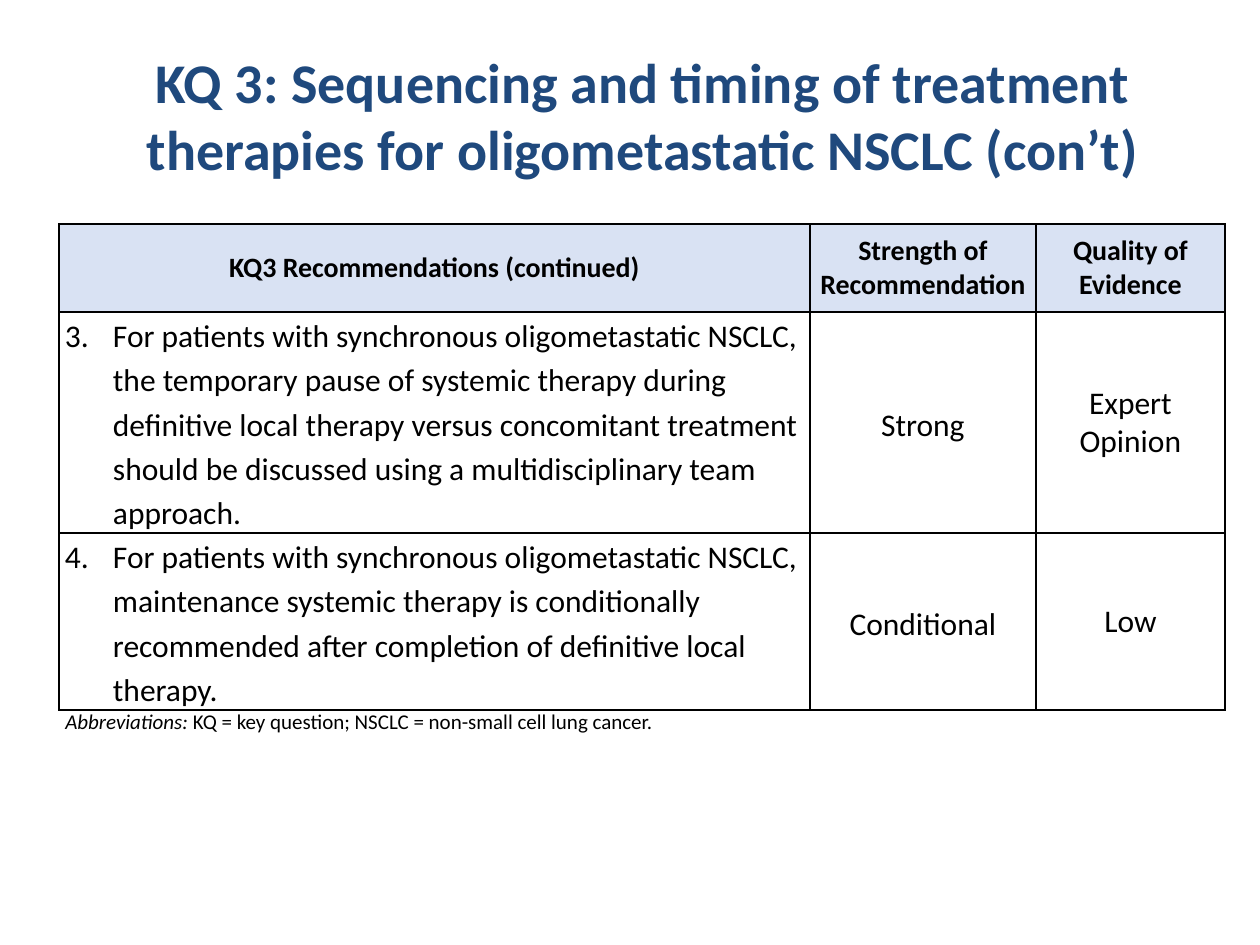
from lxml import etree
from pptx import Presentation
from pptx import util as u
from pptx.dml.color import RGBColor
from pptx.enum import text
from pptx.oxml.ns import qn

SCALE = u.Inches(1) / 126
FONT = "Calibri"
COLORS = {"title": "1F497D", "text": "000000", "header": "D9E2F3", "border": "000000"}


def px(length):
    return u.Emu(round(length * SCALE))


def add_span(para, words, size, color="text", bold=False, italic=False):
    span = para.add_run()
    span.text = words
    span.font.name = FONT
    span.font.size = u.Pt(size)
    span.font.bold = bold
    span.font.italic = italic
    span.font.color.rgb = RGBColor.from_string(COLORS[color])


deck = Presentation()
deck.slide_width, deck.slide_height = px(1260), px(945)
page = deck.slides.add_slide(deck.slide_layouts[5])

# Title
title = page.shapes.title
title.left, title.top, title.width, title.height = px(101), px(40), px(1084), px(149)
frame = title.text_frame
frame.word_wrap = True
frame.auto_size = text.MSO_AUTO_SIZE.NONE
frame.vertical_anchor = text.MSO_ANCHOR.MIDDLE
para = frame.paragraphs[0]
para.alignment = text.PP_ALIGN.CENTER
add_span(para, "KQ 3: Sequencing and timing of treatment therapies for "
         "oligometastatic NSCLC (con’t)", 32, "title", bold=True)

# Recommendations table
rows = [
    ["KQ3 Recommendations (continued)", "Strength of Recommendation", "Quality of Evidence"],
    ["For patients with synchronous oligometastatic NSCLC, the temporary pause of systemic "
     "therapy during definitive local therapy versus concomitant treatment should be "
     "discussed using a multidisciplinary team approach.", "Strong", "Expert Opinion"],
    ["For patients with synchronous oligometastatic NSCLC, maintenance systemic therapy is "
     "conditionally recommended after completion of definitive local therapy.",
     "Conditional", "Low"],
]
widths = [751, 226, 189]
heights = [88, 217, 174]
first_number = 3

table = page.shapes.add_table(len(rows), len(widths), px(59), px(224),
                              px(sum(widths)), px(sum(heights))).table
table.horz_banding = False
for column, width in zip(table.columns, widths):
    column.width = px(width)
for row, height in zip(table.rows, heights):
    row.height = px(height)

for r, row in enumerate(rows):
    for c, words in enumerate(row):
        cell = table.cell(r, c)
        is_header = r == 0
        is_numbered = r > 0 and c == 0
        cell.margin_left = cell.margin_right = px(6)
        cell.margin_top = cell.margin_bottom = 0
        cell.vertical_anchor = text.MSO_ANCHOR.TOP if is_numbered else text.MSO_ANCHOR.MIDDLE

        # Cell borders come before the fill in the cell properties
        properties = cell._tc.get_or_add_tcPr()
        for side in ("lnL", "lnR", "lnT", "lnB"):
            line = etree.SubElement(properties, qn(f"a:{side}"), w=str(u.Pt(1)))
            fill = etree.SubElement(line, qn("a:solidFill"))
            etree.SubElement(fill, qn("a:srgbClr"), val=COLORS["border"])
        if is_header:
            cell.fill.solid()
            cell.fill.fore_color.rgb = RGBColor.from_string(COLORS["header"])
        else:
            cell.fill.background()

        para = cell.text_frame.paragraphs[0]
        para.alignment = text.PP_ALIGN.LEFT if is_numbered else text.PP_ALIGN.CENTER
        if r > 0 and c < 2:
            para.line_spacing = 1.15
        if is_numbered:
            settings = para._p.get_or_add_pPr()
            settings.set("marL", str(px(48)))
            settings.set("indent", str(px(-48)))
            etree.SubElement(settings, qn("a:buFont"), typeface="+mj-lt")
            etree.SubElement(settings, qn("a:buAutoNum"), type="arabicPeriod",
                             startAt=str(first_number + r - 1))
        add_span(para, words, 16 if is_header else 18, bold=is_header)

# Abbreviations
box = page.shapes.add_textbox(px(45), px(702), px(995), px(38))
box.text_frame.word_wrap = True
para = box.text_frame.paragraphs[0]
para._p.get_or_add_pPr().set("marL", str(px(8)))
add_span(para, "Abbreviations:", 12, italic=True)
add_span(para, " KQ = key question; NSCLC = non-small cell lung cancer.", 12)

deck.save("out.pptx")
